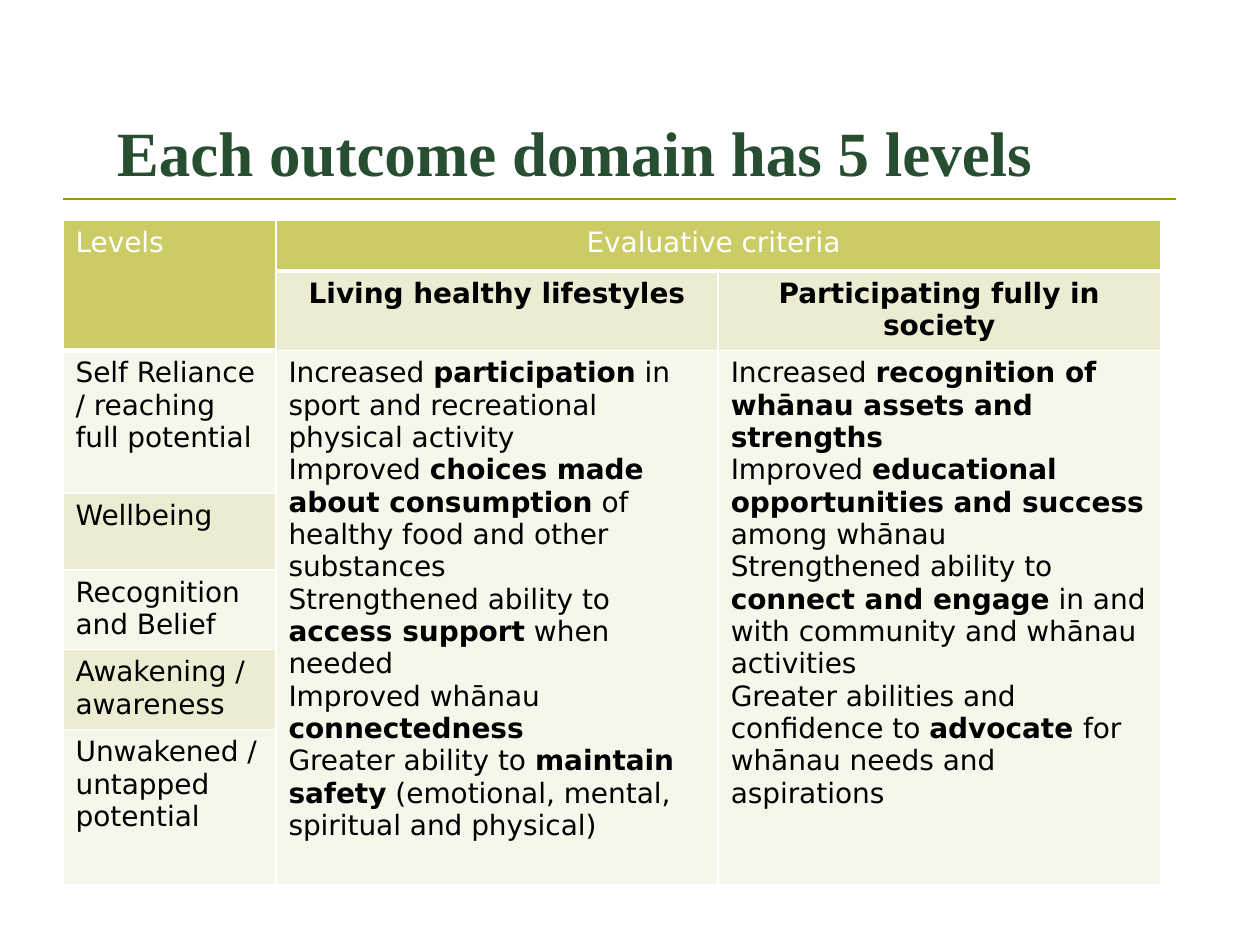
from lxml.etree import SubElement
from pptx import Presentation
from pptx.dml.color import RGBColor
from pptx.enum.shapes import MSO_CONNECTOR
from pptx.enum.text import MSO_ANCHOR, PP_ALIGN
from pptx.oxml.ns import qn
from pptx.util import Inches, Pt

COLORS = {
    "title": "284E31", "rule": "999900", "header": "CCCC66",
    "dark_band": "ECECD3", "light_band": "F6F6EA",
    "white": "FFFFFF", "black": "000000",
}
TITLE_FONT = "Times New Roman"
TABLE_FONT = "DejaVu Sans"
COLUMN_WIDTHS = [1.69, 3.51, 3.51]
ROW_HEIGHTS = [0.4, 0.62, 1.13, 0.61, 0.61, 0.62, 1.23]

LEVELS = [
    "Self Reliance / reaching full potential",
    "Wellbeing",
    "Recognition and Belief",
    "Awakening / awareness",
    "Unwakened / untapped potential",
]
# Asterisks enclose the bold words.
DOMAINS = {
    "Living healthy lifestyles": [
        "Increased *participation* in sport and recreational physical activity",
        "Improved *choices made about consumption* of healthy food and other substances",
        "Strengthened ability to* access support* when needed",
        "Improved whānau *connectedness*",
        "Greater ability to *maintain safety* (emotional, mental, spiritual and physical)",
    ],
    "Participating fully in society": [
        "Increased *recognition of whānau assets and strengths*",
        "Improved *educational opportunities and success *among whānau",
        "Strengthened ability to *connect and engage* in and with community and whānau activities",
        "Greater abilities and confidence to *advocate *for whānau needs and aspirations",
    ],
}


def color(name):
    return RGBColor.from_string(COLORS[name])


def style_font(font, face, size, color_name, bold):
    font.name = face
    font.size = Pt(size)
    font.color.rgb = color(color_name)
    font.bold = bold


def add_title(slide, text):
    title = slide.shapes.add_textbox(Inches(0.83), Inches(0.3), Inches(8.67), Inches(1.25))
    frame = title.text_frame
    frame.word_wrap = True
    frame.vertical_anchor = MSO_ANCHOR.BOTTOM
    frame.text = text
    style_font(frame.paragraphs[0].runs[0].font, TITLE_FONT, 36, "title", True)


def add_rule(slide):
    rule = slide.shapes.add_connector(
        MSO_CONNECTOR.STRAIGHT, Inches(0.5), Inches(1.58), Inches(9.33), Inches(1.58))
    rule.line.color.rgb = color("rule")
    rule.line.width = Pt(1.5)
    SubElement(rule._element.spPr, qn("a:effectLst"))


def set_borders(cell, bottom_width):
    properties = cell._tc.get_or_add_tcPr()
    for side, width in (("L", 1), ("R", 1), ("T", 1), ("B", bottom_width)):
        border = SubElement(properties, qn(f"a:ln{side}"), w=str(Pt(width)))
        fill = SubElement(border, qn("a:solidFill"))
        SubElement(fill, qn("a:srgbClr"), val=COLORS["white"])


def write_cell(cell, lines, text_color="black", align=PP_ALIGN.LEFT):
    frame = cell.text_frame
    for index, line in enumerate(lines):
        paragraph = frame.add_paragraph() if index else frame.paragraphs[0]
        paragraph.alignment = align
        for part, words in enumerate(line.split("*")):
            if words:
                run = paragraph.add_run()
                run.text = words
                style_font(run.font, TABLE_FONT, 16, text_color, part % 2 == 1)


def band_name(row, column):
    if row == 0 or (row == 1 and column == 0):
        return "header"
    if row % 2 and (row == 1 or column == 0):
        return "dark_band"
    return "light_band"


def add_levels_table(slide):
    table = slide.shapes.add_table(
        len(ROW_HEIGHTS), len(COLUMN_WIDTHS), Inches(0.5), Inches(1.75),
        Inches(sum(COLUMN_WIDTHS)), Inches(sum(ROW_HEIGHTS))).table
    for column, width in zip(table.columns, COLUMN_WIDTHS):
        column.width = Inches(width)
    for row, height in enumerate(ROW_HEIGHTS):
        table.rows[row].height = Inches(height)
        for column in range(len(COLUMN_WIDTHS)):
            cell = table.cell(row, column)
            set_borders(cell, 3 if row == 0 else 1)
            cell.fill.solid()
            cell.fill.fore_color.rgb = color(band_name(row, column))

    table.cell(0, 0).merge(table.cell(1, 0))
    table.cell(0, 1).merge(table.cell(0, 2))
    write_cell(table.cell(0, 0), ["Levels"], "white")
    write_cell(table.cell(0, 1), ["Evaluative criteria "], "white", PP_ALIGN.CENTER)
    for row, level in enumerate(LEVELS, start=2):
        write_cell(table.cell(row, 0), [level])
    for column, (domain, criteria) in enumerate(DOMAINS.items(), start=1):
        write_cell(table.cell(1, column), [f"*{domain}*"], align=PP_ALIGN.CENTER)
        table.cell(2, column).merge(table.cell(len(ROW_HEIGHTS) - 1, column))
        write_cell(table.cell(2, column), criteria)


def main():
    deck = Presentation()
    deck.slide_width = Inches(10)
    deck.slide_height = Inches(7.5)
    slide = deck.slides.add_slide(deck.slide_layouts[6])
    add_rule(slide)
    add_title(slide, "Each outcome domain has 5 levels")
    add_levels_table(slide)
    deck.save("out.pptx")


if __name__ == "__main__":
    main()
